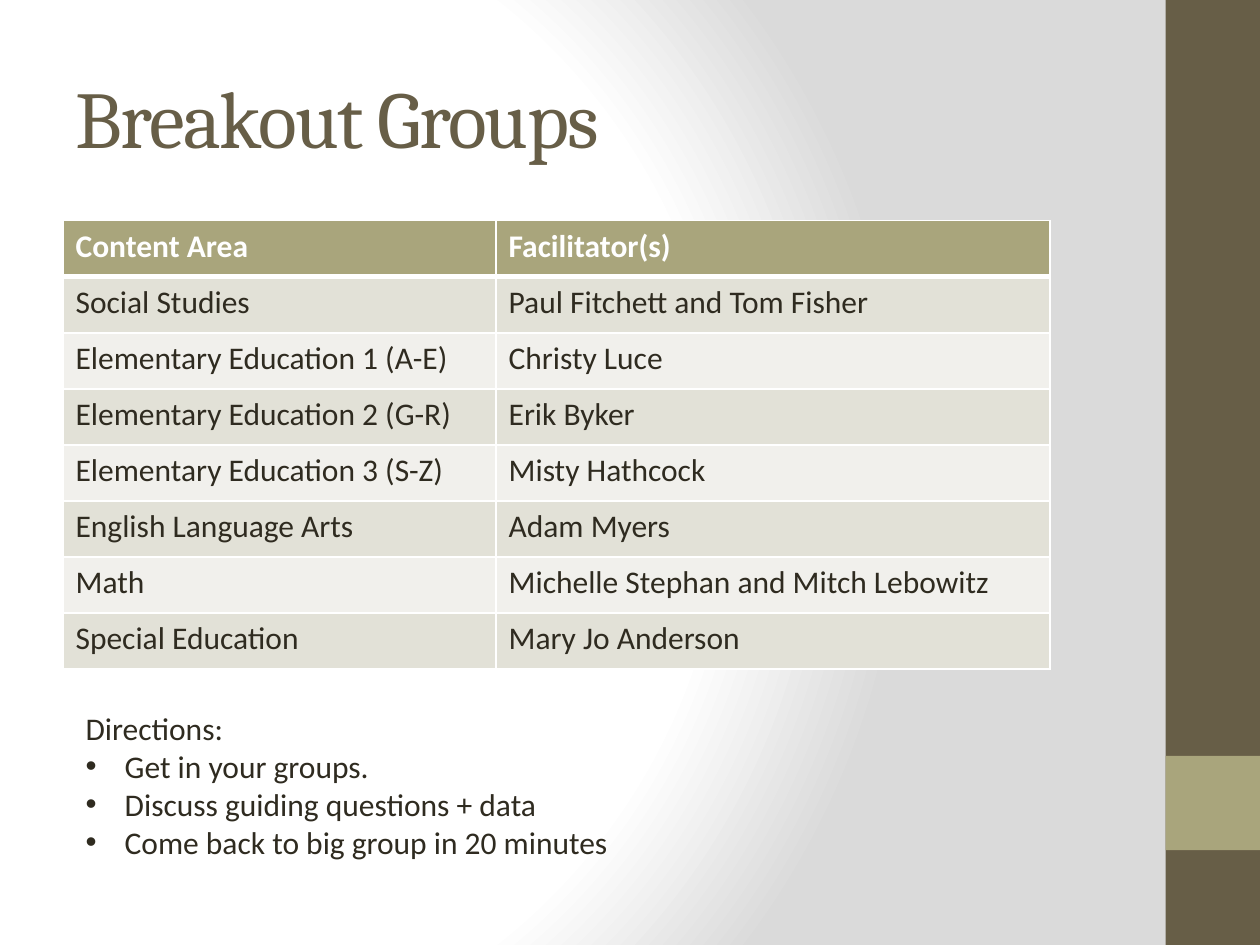
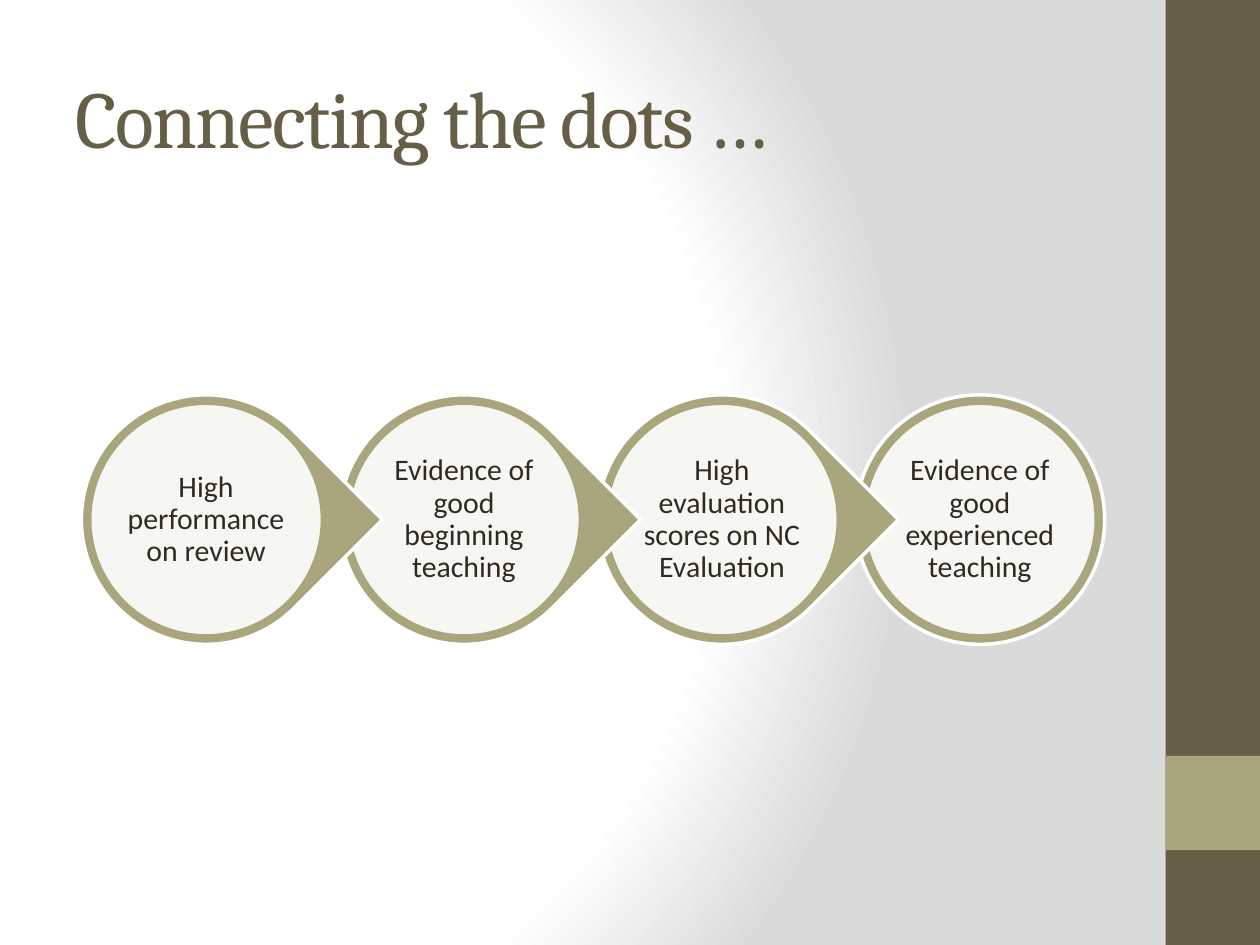
from lxml.etree import SubElement
from pptx import Presentation
from pptx.dml.color import RGBColor
from pptx.enum.shapes import MSO_SHAPE
from pptx.enum.text import MSO_ANCHOR, MSO_AUTO_SIZE, PP_ALIGN
from pptx.oxml import parse_xml
from pptx.oxml.ns import nsdecls, qn
from pptx.util import Cm, Pt

WHITE = RGBColor(0xFF, 0xFF, 0xFF)
GREY = RGBColor(0xDA, 0xDA, 0xDA)
BROWN = RGBColor(0x67, 0x5E, 0x47)
OLIVE = RGBColor(0xA9, 0xA5, 0x7C)
INK = RGBColor(0x2F, 0x2B, 0x20)
ROW_DARK = RGBColor(0xE2, 0xE1, 0xD7)
ROW_LIGHT = RGBColor(0xF1, 0xF0, 0xEC)

HEADING_FONT = "Cambria"
BODY_FONT = "Calibri"
SLIDE_WIDTH, SLIDE_HEIGHT = Cm(25.4), Cm(19.05)
TITLE_AND_CONTENT, TITLE_ONLY = 1, 5

GROUPS = [
    ("Content Area", "Facilitator(s)"),
    ("Social Studies", "Paul Fitchett and Tom Fisher"),
    ("Elementary Education 1 (A-E)", "Christy Luce"),
    ("Elementary Education 2 (G-R)", "Erik Byker"),
    ("Elementary Education 3 (S-Z)", "Misty Hathcock"),
    ("English Language Arts", "Adam Myers"),
    ("Math", "Michelle Stephan and Mitch Lebowitz"),
    ("Special Education", "Mary Jo Anderson"),
]
DIRECTIONS = [
    "Directions:",
    "Get in your groups.",
    "Discuss guiding questions + data",
    "Come back to big group in 20 minutes",
]
DOTS = [
    "High performance on review",
    "Evidence of good beginning teaching",
    "High evaluation scores on NC Evaluation",
    "Evidence of good experienced teaching",
]


def format_runs(paragraph, size, color, font=BODY_FONT, bold=False):
    for run in paragraph.runs:
        run.font.size = Pt(size)
        run.font.name = font
        run.font.bold = bold
        run.font.color.rgb = color


def add_filled_shape(slide, preset, left, top, width, height, fill, outline=None):
    shape = slide.shapes.add_shape(preset, left, top, width, height)
    shape.shadow.inherit = False
    shape.fill.solid()
    shape.fill.fore_color.rgb = fill
    if outline is None:
        shape.line.fill.background()
    else:
        shape.line.color.rgb = outline
        shape.line.width = Pt(2)
    return shape


def set_background(master):
    """Give the master a white-to-grey circular gradient."""
    master.background.fill.solid()
    solid = master.element.find(".//" + qn("p:bgPr")).find(qn("a:solidFill"))
    stops = "".join(
        f'<a:gs pos="{position * 1000}"><a:srgbClr val="{color}"/></a:gs>'
        for position, color in ((0, WHITE), (75, WHITE), (100, GREY))
    )
    gradient = parse_xml(
        f'<a:gradFill {nsdecls("a")} rotWithShape="1"><a:gsLst>{stops}</a:gsLst>'
        '<a:path path="circle">'
        '<a:fillToRect l="20000" t="50000" r="100000" b="50000"/>'
        "</a:path></a:gradFill>"
    )
    solid.getparent().replace(solid, gradient)


def place(shape, left, top, width, height):
    shape.left, shape.top, shape.width, shape.height = left, top, width, height


def set_title_place(master):
    title = next(p for p in master.placeholders if p.placeholder_format.type == 1)
    place(title, Cm(1.27), Cm(0.76), Cm(21.16), Cm(3.18))


def move_bands_to_master(slide, master):
    """Draw the right-hand bands on a slide and hand them to the master."""
    band_width = Cm(1.9)
    left = SLIDE_WIDTH - band_width
    bands = [
        add_filled_shape(slide, MSO_SHAPE.RECTANGLE, left, top, band_width, height, fill)
        for top, height, fill in (
            (0, SLIDE_HEIGHT, BROWN),
            (Cm(15.24), band_width, OLIVE),
        )
    ]
    for offset, band in enumerate(bands):
        band.element.find(".//" + qn("p:cNvPr")).set("id", str(100 + offset))
        master.shapes.element.insert(2 + offset, band.element)


def add_titled_slide(prs, layout_index, heading):
    slide = prs.slides.add_slide(prs.slide_layouts[layout_index])
    title = slide.shapes.title
    title.text_frame.text = heading
    title.text_frame.vertical_anchor = MSO_ANCHOR.MIDDLE
    paragraph = title.text_frame.paragraphs[0]
    paragraph.alignment = PP_ALIGN.LEFT
    format_runs(paragraph, 46, BROWN, HEADING_FONT)
    for properties in title.element.iter(qn("a:rPr")):
        properties.set("spc", "-100")
    return slide


def set_cell_borders(cell, bottom_points):
    properties = cell._tc.get_or_add_tcPr()
    edges = (("lnL", 1), ("lnR", 1), ("lnT", 1), ("lnB", bottom_points))
    for position, (edge, points) in enumerate(edges):
        border = parse_xml(
            f'<a:{edge} {nsdecls("a")} w="{Pt(points)}"><a:solidFill>'
            f'<a:srgbClr val="{WHITE}"/></a:solidFill></a:{edge}>'
        )
        properties.insert(position, border)


def add_groups_table(slide, left, top, column_widths, row_height):
    table = slide.shapes.add_table(
        len(GROUPS), len(column_widths), left, top,
        sum(column_widths), row_height * len(GROUPS),
    ).table
    table.horz_banding = False
    for column, width in zip(table.columns, column_widths):
        column.width = width
    for row_index, group in enumerate(GROUPS):
        is_header = row_index == 0
        band = ROW_DARK if row_index % 2 else ROW_LIGHT
        table.rows[row_index].height = row_height
        for column_index, entry in enumerate(group):
            cell = table.cell(row_index, column_index)
            cell.text_frame.text = entry
            format_runs(cell.text_frame.paragraphs[0], 18,
                        WHITE if is_header else INK, bold=is_header)
            cell.fill.solid()
            cell.fill.fore_color.rgb = OLIVE if is_header else band
            set_cell_borders(cell, 3 if is_header else 1)


def fill_directions(body, left, top, width, height):
    """Write a plain lead line followed by bulleted steps."""
    place(body, left, top, width, height)
    frame = body.text_frame
    frame.text = "\n".join(DIRECTIONS)
    frame.auto_size = MSO_AUTO_SIZE.NONE
    for index, paragraph in enumerate(frame.paragraphs):
        paragraph.space_before = Pt(0)
        format_runs(paragraph, 18, INK)
        indent = Cm(0.79) if index else 0
        properties = body.element.findall(".//" + qn("a:p"))[index].get_or_add_pPr()
        properties.set("marL", str(indent))
        properties.set("indent", str(-indent))
        if index:
            SubElement(properties, qn("a:buFont")).set("typeface", "Arial")
            SubElement(properties, qn("a:buChar")).set("char", "•")
        else:
            SubElement(properties, qn("a:buNone"))


def add_dot(slide, left, top, diameter, label, is_last):
    """Draw a disc, pointed at the next one unless it is the last, with its label."""
    preset = MSO_SHAPE.OVAL if is_last else MSO_SHAPE.TEAR
    rim = add_filled_shape(slide, preset, left, top, diameter, diameter, OLIVE, WHITE)
    if not is_last:
        rim.rotation = 45

    inset = Cm(0.17)
    face_size = diameter - 2 * inset
    face = add_filled_shape(slide, MSO_SHAPE.OVAL, left + inset, top + inset,
                            face_size, face_size, WHITE, OLIVE)
    face_color = face.element.spPr.find(qn("a:solidFill")).find(qn("a:srgbClr"))
    SubElement(face_color, qn("a:alpha")).set("val", "90000")

    frame = face.text_frame
    frame.text = label
    frame.word_wrap = True
    frame.vertical_anchor = MSO_ANCHOR.MIDDLE
    frame.margin_left = frame.margin_right = Cm(0.05)
    frame.margin_top = frame.margin_bottom = Cm(0.05)
    paragraph = frame.paragraphs[0]
    paragraph.alignment = PP_ALIGN.CENTER
    paragraph.line_spacing = 0.9
    format_runs(paragraph, 17, INK)


def add_dot_chain(slide, left, top, diameter, pitch):
    """Draw from the last dot back, so each point overlaps the next dot."""
    last = len(DOTS) - 1
    for index, label in reversed(list(enumerate(DOTS))):
        add_dot(slide, left + index * pitch, top, diameter, label, index == last)


def main():
    prs = Presentation()
    prs.slide_width, prs.slide_height = SLIDE_WIDTH, SLIDE_HEIGHT
    master = prs.slide_master
    set_background(master)
    set_title_place(master)

    breakout = add_titled_slide(prs, TITLE_AND_CONTENT, "Breakout Groups")
    move_bands_to_master(breakout, master)
    add_groups_table(breakout, Cm(1.27), Cm(4.45), (Cm(8.73), Cm(11.17)), Cm(1.13))
    fill_directions(breakout.placeholders[1], Cm(1.47), Cm(14.17), Cm(19.69), Cm(3.33))

    connecting = add_titled_slide(prs, TITLE_ONLY, "Connecting the dots …")
    add_dot_chain(connecting, Cm(1.64), Cm(7.96), Cm(5.03), Cm(5.2))

    prs.save("out.pptx")


if __name__ == "__main__":
    main()
